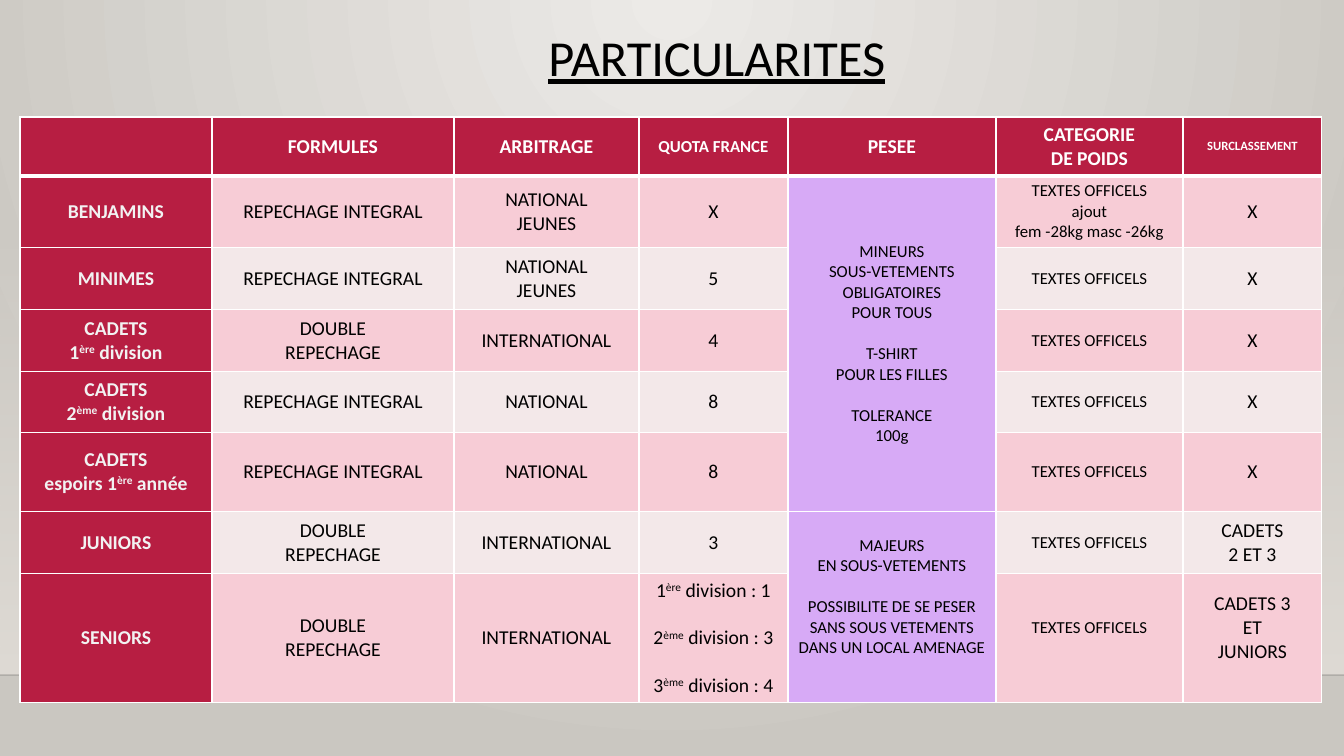
from lxml import etree
from pptx import Presentation, util as u
from pptx.dml.color import RGBColor
from pptx.enum import shapes, text
from pptx.oxml import parse_xml
from pptx.oxml.ns import qn

PX = 12192000 / 1344
FONT = "Calibri"
NS = 'xmlns:a="http://schemas.openxmlformats.org/drawingml/2006/main"'
COLORS = {
    "glow": "ECEAE7", "edge": "CAC7C1", "floor": "DFDBD5", "rule": "000001",
    "red": "B71E42", "pink": "F7CCD6", "pale": "F3E8E9", "violet": "D7AAF6",
    "white": "FFFFFF", "label": "F2F2F2", "black": "000000",
}


def px(*lengths):
    return [u.Emu(round(length * PX)) for length in lengths]


def write(frame, words, size, color, bold=False, underline=False):
    """One paragraph per line; an empty line is a gap, ^...^ is superscript."""
    para, gap = None, 0
    for line in words.split("\n"):
        if not line:
            gap = size * 1.22
            continue
        para = frame.add_paragraph() if para else frame.paragraphs[0]
        para.alignment = text.PP_ALIGN.CENTER
        para.space_before, gap = u.Pt(gap), 0
        for i, part in enumerate(line.split("^")):
            span = para.add_run()
            span.text = part
            span.font.name, span.font.size = FONT, u.Pt(size)
            span.font.bold, span.font.underline = bold, underline
            span.font.color.rgb = RGBColor.from_string(COLORS[color])
            if i % 2:
                span._r.get_or_add_rPr().set("baseline", "30000")


deck = Presentation()
deck.slide_width, deck.slide_height = px(1344, 756)
page = deck.slides.add_slide(deck.slide_layouts[5])

# Background glow
page.background.fill.solid()
solid = page.background._cSld.find(".//" + qn("a:solidFill"))
solid.getparent().replace(solid, parse_xml(
    f'<a:gradFill {NS} rotWithShape="1"><a:gsLst>'
    f'<a:gs pos="0"><a:srgbClr val="{COLORS["glow"]}"/></a:gs>'
    f'<a:gs pos="100000"><a:srgbClr val="{COLORS["edge"]}"/></a:gs></a:gsLst>'
    '<a:path path="circle"><a:fillToRect l="43000" t="0" r="43000" b="100000"/></a:path>'
    '</a:gradFill>'))

# Wall fading in above the floor line
wall = page.shapes.add_shape(shapes.MSO_SHAPE.RECTANGLE, *px(0, 223, 1344, 452))
wall.shadow.inherit = False
wall.line.fill.background()
wall.fill.gradient()
wall.fill.gradient_angle = 270
for stop, place in zip(wall.fill.gradient_stops, (0, 1)):
    stop.position = place
    stop.color.rgb = RGBColor.from_string(COLORS["floor"])
clear = wall._element.spPr.find(".//" + qn("a:srgbClr"))
etree.SubElement(clear, qn("a:alpha"), val="0")

rule = page.shapes.add_connector(shapes.MSO_CONNECTOR.STRAIGHT, *px(0, 675, 1344, 675))
rule.line.width = u.Pt(1)
rule.line.color.rgb = RGBColor.from_string(COLORS["rule"])
etree.SubElement(rule._element.spPr.find(".//" + qn("a:srgbClr")), qn("a:alpha"), val="20000")
etree.SubElement(rule._element.spPr, qn("a:effectLst"))

# Title
title = page.shapes.title
title.left, title.top, title.width, title.height = px(188, 28, 1058, 36)
title.text_frame.auto_size = text.MSO_AUTO_SIZE.NONE
title.text_frame.vertical_anchor = text.MSO_ANCHOR.TOP
write(title.text_frame, "PARTICULARITES", 36, "black", underline=True)
title.text_frame.paragraphs[0].line_spacing = 0.9

# Table contents
INTEGRAL, DOUBLE = "REPECHAGE INTEGRAL", "DOUBLE\nREPECHAGE"
OFFICIAL = "TEXTES OFFICELS"
MINORS = ("MINEURS\nSOUS-VETEMENTS\nOBLIGATOIRES\nPOUR TOUS\n\n"
          "T-SHIRT\nPOUR LES FILLES\n\nTOLERANCE\n100g")
ADULTS = ("MAJEURS\nEN SOUS-VETEMENTS\n\n"
          "POSSIBILITE DE SE PESER SANS SOUS VETEMENTS DANS UN LOCAL AMENAGE")
ROWS = [
    ["", "FORMULES", "ARBITRAGE", "QUOTA FRANCE", "PESEE", "CATEGORIE\nDE POIDS",
     "SURCLASSEMENT"],
    ["BENJAMINS", INTEGRAL, "NATIONAL\nJEUNES", "X", MINORS,
     OFFICIAL + "\najout\nfem -28kg masc -26kg", "X"],
    ["MINIMES", INTEGRAL, "NATIONAL\nJEUNES", "5", "", OFFICIAL, "X"],
    ["CADETS\n1^ère^ division", DOUBLE, "INTERNATIONAL", "4", "", OFFICIAL, "X"],
    ["CADETS\n2^ème^ division", INTEGRAL, "NATIONAL", "8", "", OFFICIAL, "X"],
    ["CADETS\nespoirs 1^ère^ année", INTEGRAL, "NATIONAL", "8", "", OFFICIAL, "X"],
    ["JUNIORS", DOUBLE, "INTERNATIONAL", "3", ADULTS, OFFICIAL, "CADETS\n2 ET 3"],
    ["SENIORS", DOUBLE, "INTERNATIONAL",
     "1^ère^ division : 1\n\n2^ème^ division : 3\n\n3^ème^ division : 4", "",
     OFFICIAL, "CADETS 3\nET\nJUNIORS"],
]
WIDTHS = [192, 242, 185, 149, 208, 187, 139]
HEIGHTS = [59, 70, 62, 62, 61, 79, 62, 129]
HEAD_SIZES = [14, 14, 14, 12, 14, 14, 9]
BODY_SIZES = [14, 14, 14, 14, 12, 12, 14]
WEIGHING = 4

table = page.shapes.add_table(
    len(ROWS), len(WIDTHS), *px(20, 117, sum(WIDTHS), sum(HEIGHTS))).table
for column, width in zip(table.columns, px(*WIDTHS)):
    column.width = width
for row, height in zip(table.rows, px(*HEIGHTS)):
    row.height = height
for first, last in ((1, 5), (6, 7)):
    table.cell(first, WEIGHING).merge(table.cell(last, WEIGHING))

# Cells: fill, white borders, text
for r, row in enumerate(ROWS):
    for c, words in enumerate(row):
        cell = table.cell(r, c)
        header = r == 0
        if header or c == 0:
            fill = "red"
        elif c == WEIGHING:
            fill = "violet"
        else:
            fill = "pink" if r % 2 else "pale"
        cell.fill.solid()
        cell.fill.fore_color.rgb = RGBColor.from_string(COLORS[fill])
        cell.vertical_anchor = text.MSO_ANCHOR.MIDDLE
        for i, side in enumerate("LRTB"):
            thick = (r, side) in ((0, "B"), (1, "T"))
            cell._tc.tcPr.insert(i, parse_xml(
                f'<a:ln{side} {NS} w="{38100 if thick else 12700}"><a:solidFill>'
                f'<a:srgbClr val="{COLORS["white"]}"/></a:solidFill></a:ln{side}>'))
        if words:
            size = (HEAD_SIZES if header else BODY_SIZES)[c]
            color = "white" if header else "black" if c else "label"
            write(cell.text_frame, words, size, color, bold=header or c == 0)

# These cells sit a little above the middle
for r, c in ((6, WEIGHING), (7, 5), (7, 6)):
    table.cell(r, c).margin_bottom = px(26)[0]

deck.save("out.pptx")
